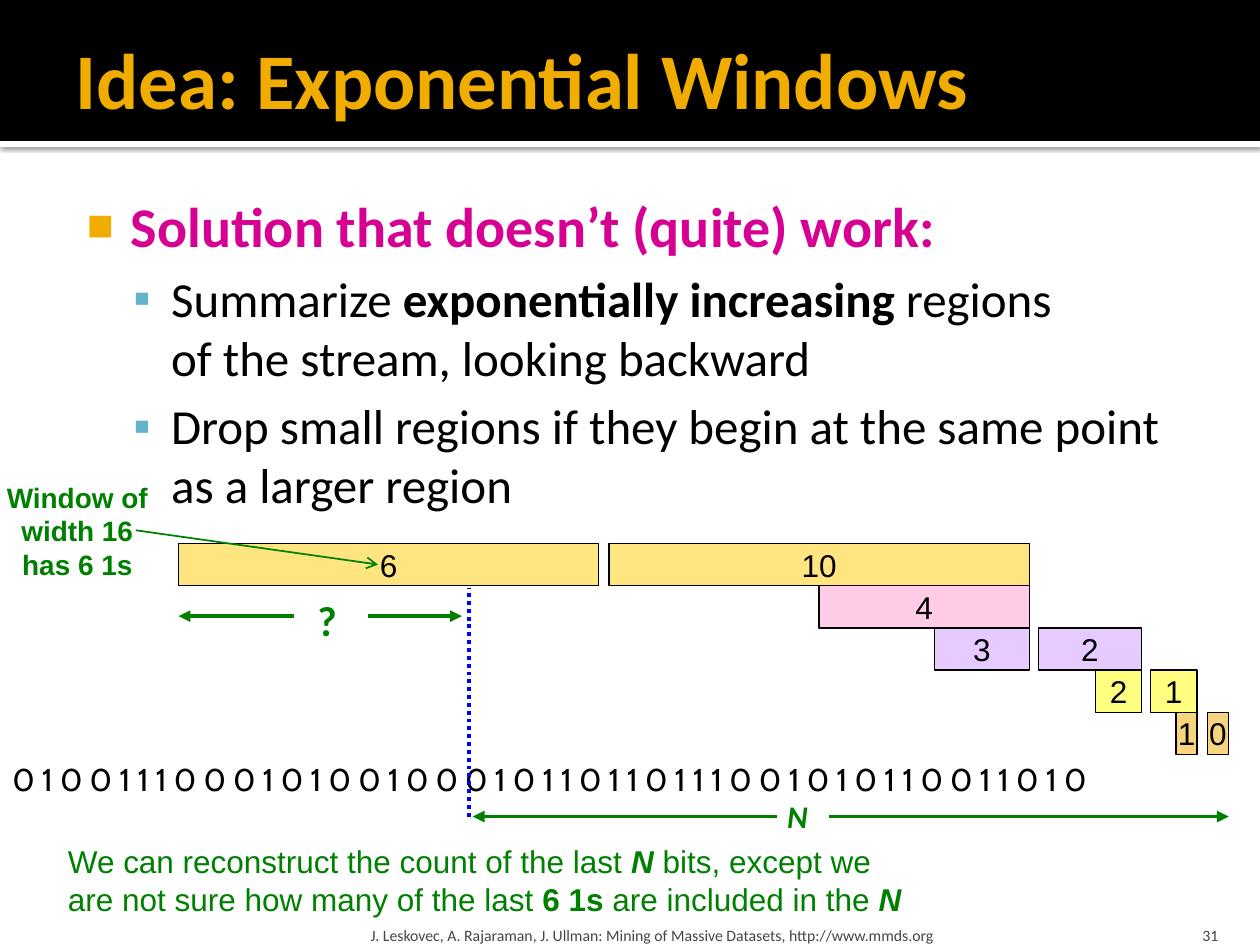
import dataclasses
from typing import Optional

import lxml.etree
import pptx
import pptx.dml.color
import pptx.enum.dml
import pptx.enum.shapes
import pptx.enum.text
import pptx.oxml
import pptx.oxml.ns
import pptx.util

Cm = pptx.util.Cm
Pt = pptx.util.Pt
Align = pptx.enum.text.PP_ALIGN
Anchor = pptx.enum.text.MSO_ANCHOR
qn = pptx.oxml.ns.qn

COLORS = {
    "black": "000000", "white": "FFFFFF", "gold": "F0AD00", "teal": "60B5CC",
    "magenta": "D60093", "green": "008000", "blue": "0000FF", "gray": "454545",
    "amber": "FFCC00", "pink": "FF99CC", "violet": "CC99FF", "yellow": "FFFF00",
}
ROW_TOP, ROW_HEIGHT = 10.96, 0.85


@dataclasses.dataclass
class Span:
    text: str
    bold: bool = False
    italic: bool = False


@dataclasses.dataclass
class Window:
    left: float
    width: float
    row: int
    count: str
    color: str


@dataclasses.dataclass
class Line:
    start: tuple[float, float]
    end: tuple[float, float]
    color: str = "green"
    weight: float = 2.25
    head: Optional[str] = "triangle"
    dotted: bool = False


@dataclasses.dataclass
class Label:
    area: tuple[float, float, float, float]
    spans: list[Span]
    size: float
    font: str = "Arial"
    color: str = "green"
    align: Align = Align.LEFT
    wrap: bool = True
    anchor: Anchor = Anchor.TOP
    insets: tuple[float, float, float, float] = (0.25, 0.13, 0.25, 0.13)


@dataclasses.dataclass
class Bullet:
    spans: list[Span]
    size: float
    color: str
    mark: str
    mark_color: str
    mark_percent: int
    margin: float
    hanging: float
    space_before: float


WINDOWS = [
    Window(24.34, 0.42, 4, "0", "gold"),
    Window(23.71, 0.42, 4, "1", "gold"),
    Window(23.19, 0.94, 3, "1", "yellow"),
    Window(22.08, 0.94, 3, "2", "yellow"),
    Window(20.93, 2.08, 2, "2", "violet"),
    Window(18.84, 1.91, 2, "3", "violet"),
    Window(16.51, 4.24, 1, "4", "pink"),
    Window(12.28, 8.47, 0, "10", "amber"),
    Window(3.6, 8.47, 0, "6", "amber"),
]
LINES = [
    Line((15.67, 16.46), (9.53, 16.46)),
    Line((16.71, 16.46), (24.77, 16.46)),
    Line((5.93, 12.42), (3.6, 12.42)),
    Line((7.41, 12.42), (9.31, 12.42)),
    Line((2.74, 10.69), (7.62, 11.38), weight=1, head="arrow"),
    Line((9.45, 16.46), (9.45, 11.86), "blue", head=None, dotted=True),
]
BITS = "010011100010100100010110110111001010110011010"
FOOTER = "J. Leskovec, A. Rajaraman, J. Ullman: Mining of Massive Datasets, http://www.mmds.org"
LABELS = [
    Label((7.34, 18.29, 15.29, 0.76), [Span(FOOTER)], 9, "Calibri", "gray",
          anchor=Anchor.BOTTOM, insets=(0.13, 0.13, 0.13, 0)),
    Label((22.78, 18.29, 2.03, 0.76), [Span("31")], 9, "Calibri", "gray",
          Align.RIGHT, anchor=Anchor.BOTTOM, insets=(0.25, 0.13, 0.25, 0)),
    Label((0, 15.19, 24.92, 1.02), [Span(" ".join(BITS))], 18, "Cabin", "black", wrap=False),
    Label((15.62, 15.93, 0.97, 1.02), [Span("N", True, True)], 18, "Calibri", wrap=False),
    Label((6.15, 11.86, 0.89, 1.27), [Span("?", True)], 24, "Calibri", wrap=False),
    Label((1.12, 16.84, 17.7, 1.8), [
        Span("We can reconstruct the count of the last "), Span("N ", True, True),
        Span("bits, except we are not sure how many of the last "), Span("6 1s", True),
        Span(" are included in the "), Span("N", True, True)], 18),
    Label((-0.13, 9.55, 3.38, 2.31), [Span("Window of width 16 has 6 1s", True)], 16,
          align=Align.CENTER),
]
REGION_STYLE = dict(size=28, color="black", mark="▪", mark_color="teal", mark_percent=100,
                    margin=2.03, hanging=0.76, space_before=5.6)
BULLETS = [
    Bullet([Span("Solution that doesn’t (quite) work:", True)], 32, "magenta",
           "■", "gold", 80, 1.22, 0.89, 0),
    Bullet([Span("Summarize "), Span("exponentially increasing ", True),
            Span("regions \nof the stream, looking backward")], **REGION_STYLE),
    Bullet([Span("Drop small regions if they begin at the same point as a larger region")],
           **REGION_STYLE),
]


def rgb(name: str) -> pptx.dml.color.RGBColor:
    return pptx.dml.color.RGBColor.from_string(COLORS[name])


def set_font(font, name: str, size: float, color: str) -> None:
    font.name, font.size = name, Pt(size)
    font.color.rgb = rgb(color)


def set_insets(frame, insets: tuple[float, float, float, float]) -> None:
    (frame.margin_left, frame.margin_top,
     frame.margin_right, frame.margin_bottom) = map(Cm, insets)


def add_spans(para, spans: list[Span]) -> None:
    for span in spans:
        for index, text in enumerate(span.text.split("\n")):
            if index:
                para.add_line_break()
            run = para.add_run()
            run.text = text
            run.font.bold, run.font.italic = span.bold, span.italic


def add_rectangle(page, left: float, top: float, width: float, height: float, color: str):
    box = page.shapes.add_shape(pptx.enum.shapes.MSO_SHAPE.RECTANGLE,
                                Cm(left), Cm(top), Cm(width), Cm(height))
    box.shadow.inherit = False
    box.fill.solid()
    box.fill.fore_color.rgb = rgb(color)
    box.line.fill.background()
    return box


def add_header(page) -> None:
    rule = add_rectangle(page, 0, 2.84, 25.4, 0.13, "white")
    effects = rule.element.spPr.find(qn("a:effectLst"))
    shadow = lxml.etree.SubElement(effects, qn("a:outerShdw"), blurRad=str(Pt(2.5)),
                                   dist=str(Pt(0.8)), dir="5400000", rotWithShape="0")
    tint = lxml.etree.SubElement(shadow, qn("a:srgbClr"), val=COLORS["black"])
    lxml.etree.SubElement(tint, qn("a:alpha"), val="60000")
    add_rectangle(page, 0, 0, 25.4, 2.84, "black")

    title = page.shapes.title
    page.shapes.element.append(title.element)  # in front of the band
    title.left, title.top, title.width, title.height = map(Cm, (1.27, 0.2, 22.86, 2.74))
    frame = title.text_frame
    frame.text = "Idea: Exponential Windows"
    frame.vertical_anchor = Anchor.MIDDLE
    set_insets(frame, (0.25, 0.13, 0.13, 0.13))
    para = frame.paragraphs[0]
    para.alignment = Align.LEFT
    set_font(para.font, "Calibri", 45, "gold")
    para.font.bold = True


def add_bullets(page, bullets: list[Bullet]) -> None:
    frame = page.shapes.add_textbox(Cm(1.27), Cm(3.61), Cm(22.86), Cm(14.6)).text_frame
    frame.word_wrap = True
    set_insets(frame, (0.15, 0.25, 0.25, 0.13))
    for index, bullet in enumerate(bullets):
        para = frame.add_paragraph() if index else frame.paragraphs[0]
        add_spans(para, bullet.spans)
        para.space_before = Pt(bullet.space_before)
        set_font(para.font, "Calibri", bullet.size, bullet.color)
        props = para._p.get_or_add_pPr()
        props.set("marL", str(Cm(bullet.margin)))
        props.set("indent", str(-Cm(bullet.hanging)))
        marks = pptx.oxml.parse_xml(
            f'<a:pPr {pptx.oxml.ns.nsdecls("a")}>'
            f'<a:buClr><a:srgbClr val="{COLORS[bullet.mark_color]}"/></a:buClr>'
            f'<a:buSzPct val="{bullet.mark_percent * 1000}"/>'
            f'<a:buFont typeface="Arial"/><a:buChar char="{bullet.mark}"/></a:pPr>')
        for offset, mark in enumerate(list(marks)):
            props.insert(list(props).index(props.find(qn("a:defRPr"))), mark)


def add_label(page, label: Label) -> None:
    frame = page.shapes.add_textbox(*map(Cm, label.area)).text_frame
    frame.word_wrap = label.wrap
    frame.vertical_anchor = label.anchor
    set_insets(frame, label.insets)
    para = frame.paragraphs[0]
    para.alignment = label.align
    add_spans(para, label.spans)
    set_font(para.font, label.font, label.size, label.color)


def add_window(page, window: Window) -> None:
    top = ROW_TOP + window.row * ROW_HEIGHT
    box = add_rectangle(page, window.left, top, window.width, ROW_HEIGHT, window.color)
    tint = box.element.spPr.find(qn("a:solidFill"))[0]
    lxml.etree.SubElement(tint, qn("a:alpha"), val="50000")
    box.line.color.rgb = rgb("black")
    box.line.width = Pt(0.75)
    frame = box.text_frame
    frame.text = window.count
    frame.word_wrap = False
    frame.vertical_anchor = Anchor.MIDDLE
    frame.paragraphs[0].alignment = Align.CENTER
    set_font(frame.paragraphs[0].font, "Arial", 18, "black")


def add_line(page, line: Line) -> None:
    connector = page.shapes.add_connector(pptx.enum.shapes.MSO_CONNECTOR.STRAIGHT,
                                          *map(Cm, line.start + line.end))
    connector.line.color.rgb = rgb(line.color)
    connector.line.width = Pt(line.weight)
    if line.dotted:
        connector.line.dash_style = pptx.enum.dml.MSO_LINE.ROUND_DOT
    props = connector.element.spPr
    if line.head:
        lxml.etree.SubElement(props.find(qn("a:ln")), qn("a:tailEnd"), type=line.head)
    lxml.etree.SubElement(props, qn("a:effectLst"))


def main() -> None:
    deck = pptx.Presentation()
    deck.slide_width, deck.slide_height = Cm(25.4), Cm(19.05)
    page = deck.slides.add_slide(deck.slide_layouts[5])
    add_header(page)
    add_bullets(page, BULLETS)
    for draw, items in ((add_label, LABELS), (add_window, WINDOWS), (add_line, LINES)):
        for item in items:
            draw(page, item)
    deck.save("out.pptx")


if __name__ == "__main__":
    main()
